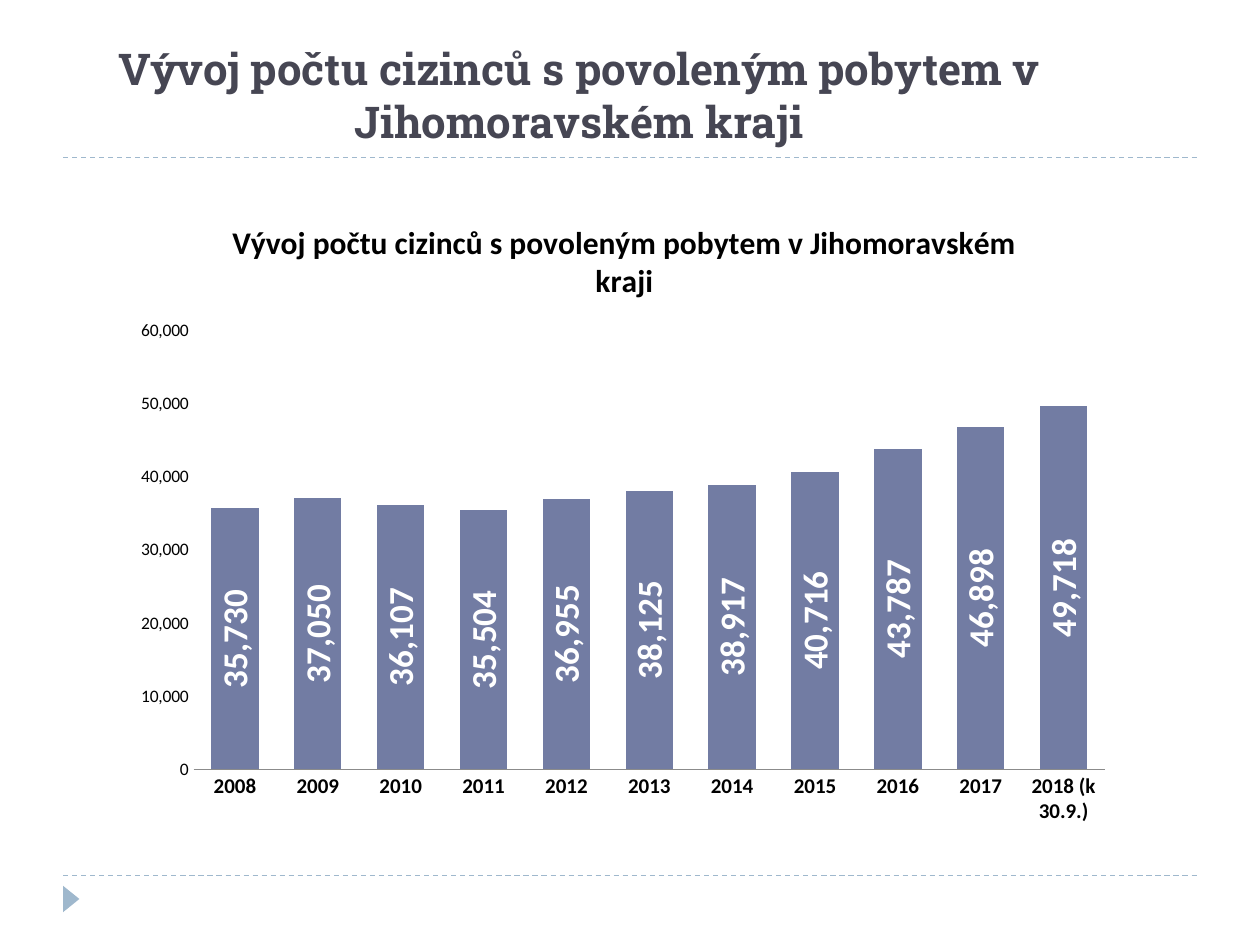
from lxml import etree
from pptx import Presentation
from pptx.chart.data import CategoryChartData
from pptx.dml.color import RGBColor
from pptx.enum.chart import XL_CHART_TYPE, XL_LABEL_POSITION, XL_TICK_MARK
from pptx.enum.dml import MSO_LINE
from pptx.enum.shapes import MSO_CONNECTOR, MSO_SHAPE
from pptx.enum.text import MSO_ANCHOR, PP_ALIGN
from pptx.oxml.ns import qn
from pptx.util import Inches, Pt

COLUMN = XL_CHART_TYPE.COLUMN_CLUSTERED
CENTER_LABEL = XL_LABEL_POSITION.CENTER
NO_TICK = XL_TICK_MARK.NONE
DASH = MSO_LINE.DASH
STRAIGHT = MSO_CONNECTOR.STRAIGHT
TRIANGLE = MSO_SHAPE.ISOSCELES_TRIANGLE
MIDDLE = MSO_ANCHOR.MIDDLE
CENTER = PP_ALIGN.CENTER

COLORS = {"accent": "9FB8CD", "title": "464653", "bar": "727CA3",
          "text": "000000", "label": "FFFFFF", "axis": "8B8B8B"}
WIDTH, HEIGHT = 10, 7.5
MARGIN = WIDTH / 20
HEADING = "Vývoj počtu cizinců s povoleným pobytem v Jihomoravském kraji"
YEARS = [str(year) for year in range(2008, 2018)] + ["2018 (k 30.9.)"]
FOREIGNERS = [35730, 37050, 36107, 35504, 36955, 38125,
              38917, 40716, 43787, 46898, 49718]
NUMBER_FORMAT = "#,##0"


def rgb(name):
    return RGBColor.from_string(COLORS[name])


def set_font(font, size, color, bold=False, name="Calibri"):
    font.name, font.size, font.bold = name, Pt(size), bold
    font.color.rgb = rgb(color)


def add_rule(slide, y):
    line = slide.shapes.add_connector(
        STRAIGHT, Inches(MARGIN), Inches(y), Inches(WIDTH - MARGIN), Inches(y))
    line.line.color.rgb = rgb("accent")
    line.line.width = Pt(0.75)
    line.line.dash_style = DASH
    etree.SubElement(line._element.spPr, qn("a:effectLst"))


def add_frame(slide, top, bottom):
    """Dashed rules above and below the content, with the footer arrow."""
    for y in (top, bottom):
        add_rule(slide, y)
    sp = slide.shapes.add_shape(TRIANGLE, Inches(0.46), Inches(bottom + 0.12),
                                Inches(0.21), Inches(0.13))
    sp.rotation = 90
    sp.shadow.inherit = False
    sp.fill.solid()
    sp.fill.fore_color.rgb = rgb("accent")
    sp.line.fill.background()


def add_title(slide, box):
    tf = slide.shapes.add_textbox(*map(Inches, box)).text_frame
    tf.word_wrap = True
    tf.vertical_anchor = MIDDLE
    p = tf.paragraphs[0]
    p.alignment = CENTER
    r = p.add_run()
    r.text = HEADING
    set_font(r.font, 25, "title", True, "Roboto Slab")


def set_plot_area(chart, **shares):
    """Fix the inner plot area as shares of the chart's size."""
    plot_area = chart._chartSpace.chart.plotArea
    for old in plot_area.findall(qn("c:layout")):
        plot_area.remove(old)
    layout = etree.Element(qn("c:layout"))
    plot_area.insert(0, layout)
    manual = etree.SubElement(layout, qn("c:manualLayout"))
    settings = {"layoutTarget": "inner", "xMode": "edge", "yMode": "edge", **shares}
    for tag, value in settings.items():
        etree.SubElement(manual, qn(f"c:{tag}")).set("val", str(value))


def style_axes(chart):
    cat, val = chart.category_axis, chart.value_axis
    for axis in (cat, val):
        axis.major_tick_mark = axis.minor_tick_mark = NO_TICK
        axis.has_major_gridlines = False
    set_font(cat.tick_labels.font, 12, "text", True)
    cat.format.line.color.rgb = rgb("axis")
    set_font(val.tick_labels.font, 10, "text")
    val.tick_labels.number_format = NUMBER_FORMAT
    val.tick_labels.number_format_is_linked = False
    val.minimum_scale, val.maximum_scale, val.major_unit = 0, 60000, 10000
    val.format.line.fill.background()


def style_columns(plot):
    plot.gap_width, plot.overlap = 75, -25
    plot.vary_by_categories = False
    series = plot.series[0]
    series.format.fill.solid()
    series.format.fill.fore_color.rgb = rgb("bar")
    labels = series.data_labels
    labels.show_value = True
    labels.position = CENTER_LABEL
    labels.number_format = NUMBER_FORMAT
    labels.number_format_is_linked = False
    set_font(labels.font, 20, "label", True)
    body = labels._element.find(qn("c:txPr")).find(qn("a:bodyPr"))
    body.set("rot", "-5400000")
    body.set("vert", "horz")


def add_column_chart(slide, box):
    data = CategoryChartData(number_format=NUMBER_FORMAT)
    data.categories = YEARS
    data.add_series("Series 1", FOREIGNERS)
    chart = slide.shapes.add_chart(COLUMN, *map(Inches, box), data).chart
    set_font(chart.font, 10, "text")
    chart.has_legend = False
    chart.has_title = True
    r = chart.chart_title.text_frame.paragraphs[0].add_run()
    r.text = HEADING
    set_font(r.font, 18, "text", True)
    chart.chart_title.include_in_layout = False
    set_plot_area(chart, x=0.07, y=0.21, w=0.91, h=0.68)
    style_axes(chart)
    style_columns(chart.plots[0])


def main():
    prs = Presentation()
    prs.slide_width, prs.slide_height = Inches(WIDTH), Inches(HEIGHT)
    slide = prs.slides.add_slide(prs.slide_layouts[6])
    add_frame(slide, top=1.25, bottom=6.95)
    add_title(slide, (0.21, 0.25, 8.77, 1))
    add_column_chart(slide, (0.98, 1.55, 7.95, 5.12))
    prs.save("out.pptx")


if __name__ == "__main__":
    main()
